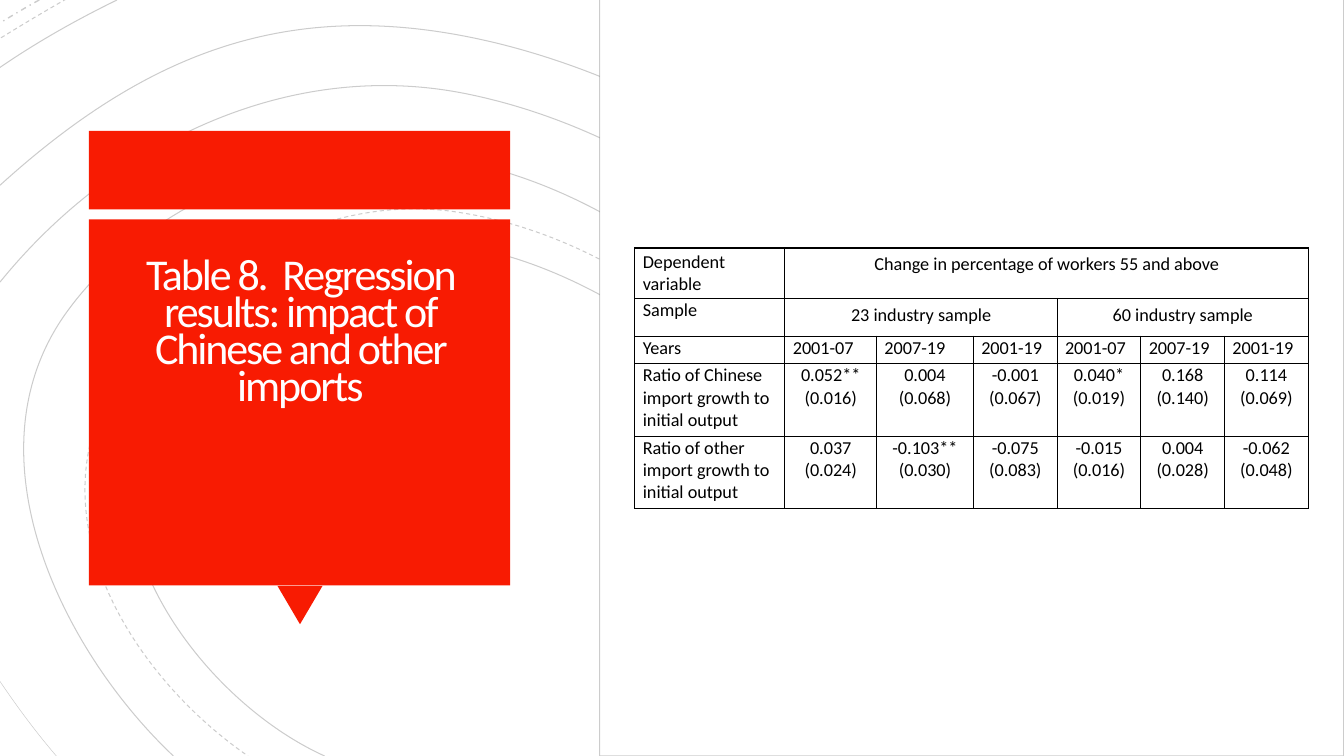
"""Build the slide with Table 8, the regression results for imports."""
import pptx
import pptx.dml.color
import pptx.enum.dml
import pptx.enum.shapes
import pptx.enum.text
import pptx.oxml
import pptx.util
from pptx.util import Cm, Pt

FONT = "Calibri"
BLACK, WHITE, RED = "000000", "FFFFFF", "F81B02"
TITLE = "Table 8.  Regression results: impact of Chinese and other imports"
TITLE_BOX = (2.49, 5.77, 10.16, 5.66)
RED_PARTS = [
    ("RECTANGLE", (2.24, 3.3, 10.62, 1.98), 0),
    ("ISOSCELES_TRIANGLE", (6.99, 14.76, 1.14, 0.97), 180),
    ("RECTANGLE", (2.24, 5.53, 10.62, 9.22), 0),
]
PANEL_BOX = (15.11, -0.03, 18.75, 19.08)

CURVES = [
    ("SOLID", 0.75, [(22.25, 19.05), (26.04, 15.88), (21.21, 10.39), (18.75, 8), (16.48, 5.84),
                     (13.61, 4.17), (10.46, 3.89), (7.29, 3.58), (3.58, 5.28), (1.73, 7.8),
                     (-0.91, 11.35), (1.52, 16.36), (4.37, 19.05)]),
    ("SOLID", 0.75, [(15.42, 19.05), (18.03, 18.44), (22.35, 16.94), (20.96, 13.44),
                     (19.63, 10.13), (15.62, 7.06), (12.19, 6.3), (9.07, 5.59), (5.49, 7.14),
                     (3.84, 9.93), (1.85, 13.31), (5.08, 17.65), (8.18, 19.05)]),
    ("DASH", 0.75, [(17.91, 19.05), (19.43, 18.52), (21.21, 17.68), (22.02, 16.21),
                    (23.01, 14.43), (21.95, 12.57), (20.75, 11.18), (18.36, 8.36),
                    (15.04, 5.77), (11.25, 5.31), (8.1, 4.95), (4.9, 6.78), (3.1, 9.35),
                    (0.69, 12.8), (3.23, 16.97), (6.25, 19.05)]),
    ("SOLID", 0.75, [(24.77, 19.05), (28.7, 15.34), (24.13, 10.49), (21.29, 7.77), (18.59, 5.23),
                     (15.32, 3.05), (11.63, 2.34), (7.21, 1.5), (2.82, 3.63), (0, 7.11)]),
    ("SOLID", 0.38, [(0, 17.17), (0.48, 17.88), (0.94, 18.49), (1.42, 19.05)]),
    ("SOLID", 0.75, [(27.05, 19.05), (30.81, 15.11), (27.1, 10.72), (23.98, 7.8), (20.75, 4.8),
                     (16.94, 2.21), (12.65, 1.12), (7.57, -0.15), (3.86, 1.17), (0, 4.67)]),
    ("SOLID", 0.75, [(2.95, 0), (2.01, 0.46), (0.99, 1.02), (0, 1.7)]),
    ("DASH", 0.75, [(1.68, -0.03), (1.14, 0.28), (0.58, 0.61), (0, 0.97)]),
    ("DASH_DOT", 1, [(0.99, 0), (0.66, 0.18), (0.33, 0.38), (0, 0.58)]),
]

TABLE_CORNER = (16, 6.25)
COLUMN_WIDTHS = [3.78, 2.31, 2.44] + [2.11] * 4
ROW_HEIGHTS = [1.27, 0.95, 0.7, 1.82, 1.82]
YEARS = ["2001-07", "2007-19", "2001-19"]
ROWS = [
    ["Dependent variable", "Change in percentage of workers 55 and above"],
    ["Sample", "23 industry sample", "", "", "60 industry sample"],
    ["Years"] + YEARS * 2,
    ["Ratio of Chinese import growth to initial output", "0.052**\n(0.016)", "0.004\n(0.068)",
     "-0.001\n(0.067)", "0.040*\n(0.019)", "0.168\n(0.140)", "0.114\n(0.069)"],
    ["Ratio of other import growth to initial output", "0.037\n(0.024)", "-0.103**\n(0.030)",
     "-0.075\n(0.083)", "-0.015\n(0.016)", "0.004\n(0.028)", "-0.062\n(0.048)"],
]
MERGES = [(0, 1, 6), (1, 1, 3), (1, 4, 6)]
YEARS_ROW = 2


def paint(color_format, color):
    color_format.rgb = pptx.dml.color.RGBColor.from_string(color)


def fill_shape(shape, color):
    shape.shadow.inherit = False
    shape.fill.solid()
    paint(shape.fill.fore_color, color)
    shape.line.fill.background()


def draw_faint_line(shape, width, dash="SOLID"):
    shape.shadow.inherit = False
    shape.line.width = Pt(width)
    shape.line.fill.solid()
    paint(shape.line.color, BLACK)
    shape.line.dash_style = getattr(pptx.enum.dml.MSO_LINE, dash)
    outline = shape._element.spPr.find(pptx.oxml.ns.qn("a:ln"))
    color = outline.find(".//" + pptx.oxml.ns.qn("a:srgbClr"))
    color.append(pptx.oxml.parse_xml(
        f'<a:alpha {pptx.oxml.ns.nsdecls("a")} val="20000"/>'))


def bend_segments(shape):
    segments = list(shape._element.iter(pptx.oxml.ns.qn("a:lnTo")))
    for start in range(0, len(segments), 3):
        bend = pptx.oxml.parse_xml(f'<a:cubicBezTo {pptx.oxml.ns.nsdecls("a")}/>')
        segments[start].addprevious(bend)
        for segment in segments[start:start + 3]:
            bend.append(segment[0])
            segment.getparent().remove(segment)


def add_curve(page, dash, width, points):
    first, *others = [tuple(map(Cm, point)) for point in points]
    builder = page.shapes.build_freeform(*first)
    builder.add_line_segments(others, close=False)
    curve = builder.convert_to_shape()
    bend_segments(curve)
    curve.fill.background()
    draw_faint_line(curve, width, dash)


def add_preset(page, kind, box):
    preset = getattr(pptx.enum.shapes.MSO_SHAPE, kind)
    return page.shapes.add_shape(preset, *map(Cm, box))


def format_span(span, size, color):
    span.font.name = FONT
    span.font.size = Pt(size)
    paint(span.font.color, color)


def add_title(page):
    frame = page.shapes.add_textbox(*map(Cm, TITLE_BOX)).text_frame
    frame.word_wrap = True
    frame.vertical_anchor = pptx.enum.text.MSO_ANCHOR.BOTTOM
    frame.margin_left = frame.margin_right = frame.margin_top = Cm(0.64)
    frame.margin_bottom = Cm(1.12)
    frame.text = TITLE
    para = frame.paragraphs[0]
    para.alignment = pptx.enum.text.PP_ALIGN.CENTER
    para.line_spacing = 0.7
    span = para.runs[0]
    format_span(span, 31.4, "FFFEFF")
    span.font._element.set("spc", "-150")


def border_cell(cell):
    properties = cell._tc.get_or_add_tcPr()
    for place, side in enumerate(("lnL", "lnR", "lnT", "lnB")):
        properties.insert(place, pptx.oxml.parse_xml(
            f'<a:{side} {pptx.oxml.ns.nsdecls("a")} w="12700"><a:solidFill>'
            f'<a:srgbClr val="{BLACK}"/></a:solidFill></a:{side}>'))


def add_results(page):
    size = (sum(COLUMN_WIDTHS), sum(ROW_HEIGHTS))
    table = page.shapes.add_table(len(ROW_HEIGHTS), len(COLUMN_WIDTHS),
                                  *map(Cm, TABLE_CORNER + size)).table
    table.first_row = table.horz_banding = False
    for column, width in zip(table.columns, COLUMN_WIDTHS):
        column.width = Cm(width)
    for row, height in zip(table.rows, ROW_HEIGHTS):
        row.height = Cm(height)
    for row, first, last in MERGES:
        table.cell(row, first).merge(table.cell(row, last))
    for row in range(len(ROW_HEIGHTS)):
        for column in range(len(COLUMN_WIDTHS)):
            cell = table.cell(row, column)
            heading = row < YEARS_ROW and column > 0
            cell.margin_left = cell.margin_right = Cm(0.28 if heading else 0.2)
            cell.margin_top = Cm(0.14 if heading else 0.02)
            cell.margin_bottom = Cm(0.14 if heading else 0)
            cell.fill.background()
            border_cell(cell)
            if column < len(ROWS[row]) and ROWS[row][column]:
                cell.text_frame.text = ROWS[row][column]
            for para in cell.text_frame.paragraphs:
                if column > 0 and row != YEARS_ROW:
                    para.alignment = pptx.enum.text.PP_ALIGN.CENTER
                for span in para.runs:
                    format_span(span, 13, BLACK)
    table.cell(0, 0).vertical_anchor = pptx.enum.text.MSO_ANCHOR.MIDDLE


def main():
    deck = pptx.Presentation()
    deck.slide_width, deck.slide_height = Cm(33.87), Cm(19.05)
    page = deck.slides.add_slide(deck.slide_layouts[6])
    for dash, width, points in CURVES:
        add_curve(page, dash, width, points)
    for kind, box, rotation in RED_PARTS:
        part = add_preset(page, kind, box)
        part.rotation = rotation
        fill_shape(part, RED)
    add_title(page)
    panel = add_preset(page, "RECTANGLE", PANEL_BOX)
    fill_shape(panel, WHITE)
    draw_faint_line(panel, 0.75)
    add_results(page)
    deck.save("out.pptx")


if __name__ == "__main__":
    main()
